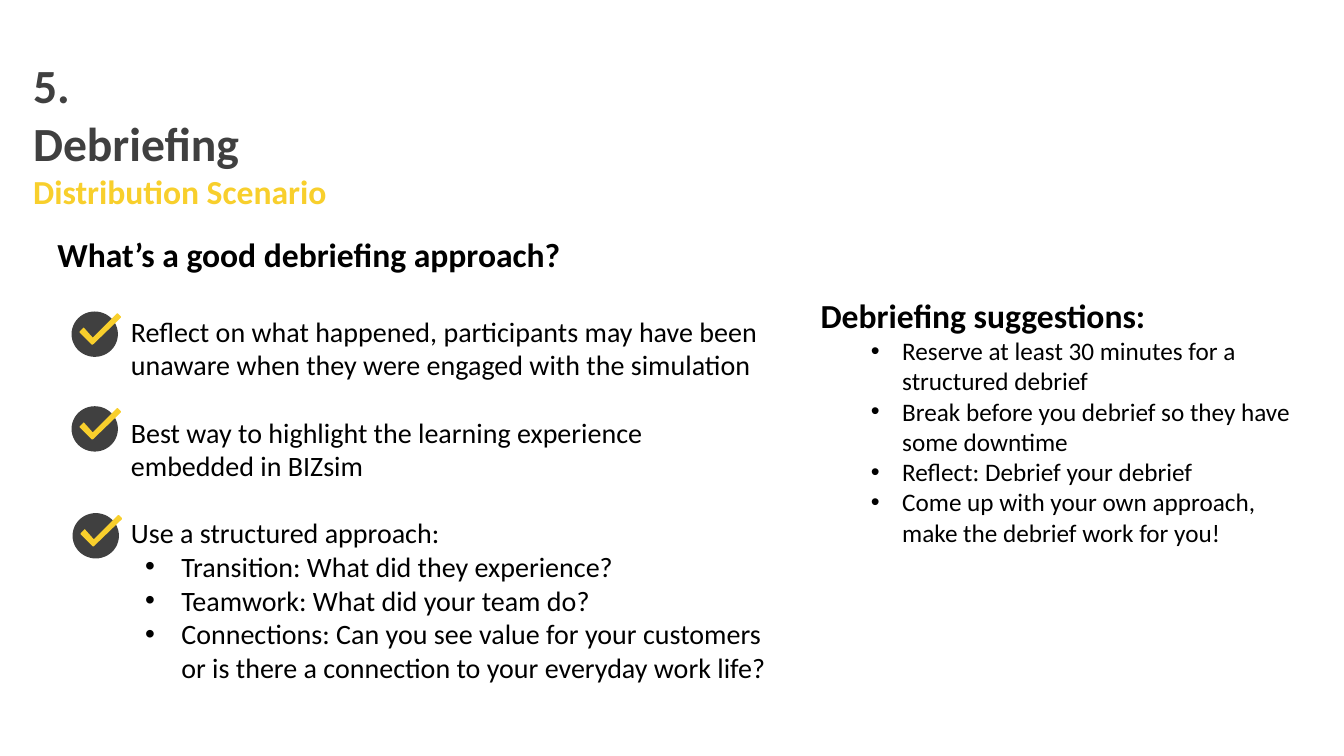
from dataclasses import dataclass
from lxml.etree import SubElement
from pptx import Presentation
from pptx.dml.color import RGBColor as RGB
from pptx.enum.shapes import MSO_SHAPE as Shape
from pptx.enum.text import MSO_AUTO_SIZE as Fit
from pptx.util import Inches, Pt


@dataclass(frozen=True)
class Theme:
    font: str = "Calibri"
    ink: str = "000000"
    dark: str = "404040"
    gold: str = "F8CF2C"
    title: int = 34
    head: int = 24
    body: int = 20
    note: int = 18


@dataclass
class Line:
    text: str
    size: int
    color: str = Theme.ink
    bold: bool = False
    left: float = 0
    hang: float = 0  # a hanging indent brings a bullet
    gap: float = 0


# Outline of the tick, measured from the corner of its disc
TICK = [(0.08, 0.2), (0.11, 0.17), (0.12, 0.16), (0.13, 0.17), (0.21, 0.26),
        (0.45, 0.02), (0.46, 0.02), (0.49, 0.05), (0.49, 0.06),
        (0.21, 0.33), (0.2, 0.33), (0.08, 0.21)]


class Board:
    def __init__(self, slide, theme):
        self.slide, self.theme = slide, theme

    def paint(self, shape, color):
        shape.shadow.inherit = False
        shape.fill.solid()
        shape.fill.fore_color.rgb = RGB.from_string(color)
        shape.line.fill.background()

    def text(self, x, y, w, h, lines):
        box = self.slide.shapes.add_textbox(*map(Inches, (x, y, w, h)))
        frame = box.text_frame
        frame.word_wrap = True
        frame.auto_size = Fit.SHAPE_TO_FIT_TEXT
        frame.text = "\n".join(line.text for line in lines)
        for para, line in zip(frame.paragraphs, lines):
            self.style(para, line)

    def style(self, para, line):
        props = para._p.get_or_add_pPr()
        props.set("marL", str(Inches(line.left)))
        props.set("indent", str(Inches(-line.hang)))
        if line.gap:
            para.space_before = Pt(line.gap)
        if line.hang:
            para.level = 1
            space = "{" + props.nsmap["a"] + "}"
            SubElement(props, space + "buFont").set("typeface", "Arial")
            SubElement(props, space + "buChar").set("char", "•")
        for run in para.runs:
            font = run.font
            font.name, font.size, font.bold = self.theme.font, Pt(line.size), line.bold
            font.color.rgb = RGB.from_string(line.color)

    def check(self, x, y):
        shapes = self.slide.shapes.add_group_shape().shapes
        disc = shapes.add_shape(Shape.OVAL, *map(Inches, (x, y, 0.46, 0.45)))
        self.paint(disc, self.theme.dark)
        dots = [(Inches(x + dx), Inches(y + dy)) for dx, dy in TICK]
        path = shapes.build_freeform(*dots[0])
        path.add_line_segments(dots[1:], close=True)
        self.paint(path.convert_to_shape(), self.theme.gold)


def main():
    deck = Presentation()
    deck.slide_width, deck.slide_height = Inches(13.33), Inches(7.5)
    look = Theme()
    board = Board(deck.slides.add_slide(deck.slide_layouts[6]), look)

    # Approach: main points and their steps
    points = [("Reflect on what happened, participants may have been unaware "
               "when they were engaged with the simulation", 28.6),
              ("Best way to highlight the learning experience embedded in BIZsim", 24),
              ("Use a structured approach:", 24)]
    steps = ["Transition: What did they experience?",
             "Teamwork: What did your team do?",
             "Connections: Can you see value for your customers or is there "
             "a connection to your everyday work life?"]
    board.text(0.47, 2.27, 7.25, 4.61,
               [Line("What’s a good debriefing approach?", look.head, bold=True)]
               + [Line(text, look.body, left=0.73, gap=gap) for text, gap in points]
               + [Line(text, look.body, left=1.23, hang=0.36) for text in steps])

    # Check marks beside the main points
    for x, y in [(0.71, 3.09), (0.71, 4.03), (0.72, 5.09)]:
        board.check(x, y)

    # Suggestions
    tips = ["Reserve at least 30 minutes for a structured debrief",
            "Break before you debrief so they have some downtime",
            "Reflect: Debrief your debrief",
            "Come up with your own approach, make the debrief work for you!"]
    board.text(8.04, 2.88, 4.87, 2.63,
               [Line("Debriefing suggestions:", look.head, bold=True)]
               + [Line(text, look.note, left=0.81, hang=0.31) for text in tips])

    # Title
    board.text(0.23, 0.51, 4.22, 1.65,
               [Line("5.", look.title, look.dark, True),
                Line("Debriefing", look.title, look.dark, True),
                Line("Distribution Scenario", look.head, look.gold, True)])

    deck.save("out.pptx")


if __name__ == "__main__":
    main()
